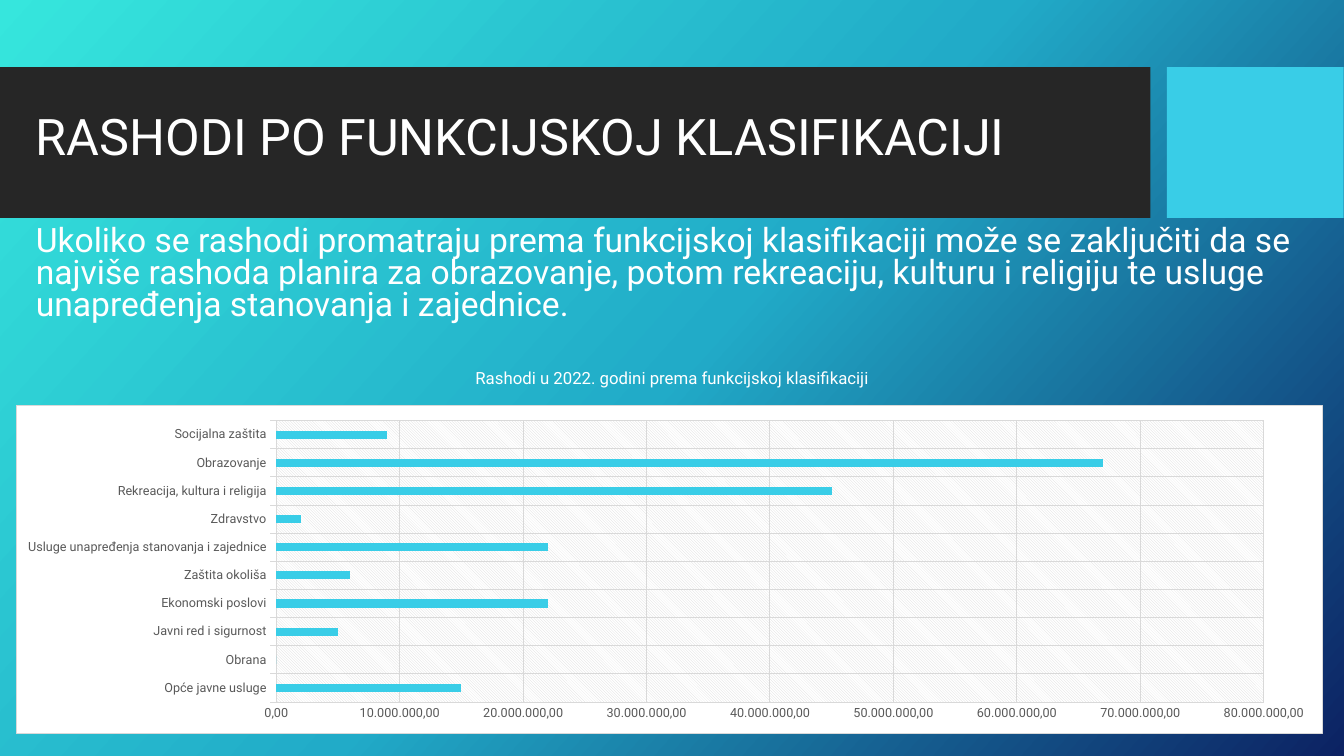
from copy import deepcopy

from lxml.etree import SubElement
from pptx import Presentation
from pptx.chart.data import CategoryChartData
from pptx.dml.color import RGBColor
from pptx.enum.chart import XL_CHART_TYPE, XL_TICK_MARK
from pptx.enum.shapes import MSO_SHAPE
from pptx.enum.text import MSO_ANCHOR, MSO_AUTO_SIZE, PP_ALIGN
from pptx.oxml import parse_xml
from pptx.oxml.ns import nsdecls, qn
from pptx.util import Cm, Pt

FONT = "Roboto"
WHITE, CYAN, DARK, GRID, LABEL = "FFFFFF", "39CDE7", "262626", "D9D9D9", "595959"
GRADIENT = [(0, "36E6DD"), (0.5, "21ABC8"), (1, "0C2263")]
BANDS = [((0, 1.69, 28.99, 3.8), DARK), ((29.41, 1.69, 4.45, 3.8), CYAN)]
TEXTS = [
    {"idx": 0, "at": (0.65, 2.64, 32.46, 1.75), "size": 36, "spacing": 0.9,
     "align": PP_ALIGN.LEFT, "anchor": MSO_ANCHOR.MIDDLE,
     "text": "RASHODI PO FUNKCIJSKOJ KLASIFIKACIJI"},
    {"idx": 1, "at": (0.65, 5.58, 32.46, 2.92), "size": 24, "spacing": 0.8,
     "align": PP_ALIGN.LEFT, "anchor": MSO_ANCHOR.TOP,
     "text": "Ukoliko se rashodi promatraju prema funkcijskoj klasifikaciji može se "
             "zaključiti da se najviše rashoda planira za obrazovanje, potom rekreaciju, "
             "kulturu i religiju te usluge unapređenja stanovanja i zajednice."},
    {"idx": 2, "at": (10.08, 9.23, 13.72, 0.71), "size": 12, "spacing": 0.8,
     "align": PP_ALIGN.CENTER, "anchor": MSO_ANCHOR.TOP,
     "text": "Rashodi u 2022. godini prema funkcijskoj klasifikaciji"},
]
EXPENSES = {
    "Opće javne usluge": 15000000,
    "Obrana": 0,
    "Javni red i sigurnost": 5000000,
    "Ekonomski poslovi": 22000000,
    "Zaštita okoliša": 6000000,
    "Usluge unapređenja stanovanja i zajednice": 22000000,
    "Zdravstvo": 2000000,
    "Rekreacija, kultura i religija": 45000000,
    "Obrazovanje": 67000000,
    "Socijalna zaštita": 9000000,
}
CHART_AT = (0.4, 10.2, 32.94, 8.3)
PLOT_PERCENT = {"x": 19.9, "y": 4.7, "w": 75.6, "h": 85.7}
NUMBER_FORMAT = r"[$-1041A]#,##0.00;\-\ #,##0.00"


def rgb(value):
    return RGBColor.from_string(value)


def apply(obj, values):
    for name, value in values.items():
        setattr(obj, name, value)


def box(at):
    return [Cm(v) for v in at]


def paint(fill, color):
    fill.solid()
    fill.fore_color.rgb = rgb(color)


def style_font(font, size, color):
    apply(font, {"name": FONT, "size": Pt(size), "bold": False})
    font.color.rgb = rgb(color)


def style_line(line, color):
    line.width = Pt(0.75)
    line.color.rgb = rgb(color)


def add_background(s):
    fill = s.background.fill
    fill.gradient()
    fill.gradient_angle = 318
    first = s._element.find(".//" + qn("a:gs"))
    first.addnext(deepcopy(first))
    for stop, (position, color) in zip(fill.gradient_stops, GRADIENT):
        stop.position = position
        stop.color.rgb = rgb(color)


def add_bands(s):
    for i, (at, color) in enumerate(BANDS):
        sp = s.shapes.add_shape(MSO_SHAPE.RECTANGLE, *box(at))
        sp.shadow.inherit = False
        paint(sp.fill, color)
        sp.line.fill.background()
        s.shapes._spTree.insert(2 + i, sp._element)


def fill_text(sp, item):
    apply(sp, dict(zip(("left", "top", "width", "height"), box(item["at"]))))
    tf = sp.text_frame
    tf.text = item["text"]
    apply(tf, {"word_wrap": True, "auto_size": MSO_AUTO_SIZE.NONE,
               "vertical_anchor": item["anchor"]})
    p = tf.paragraphs[0]
    apply(p, {"alignment": item["align"], "line_spacing": item["spacing"],
              "space_before": Pt(0)})
    pPr = p._p.get_or_add_pPr()
    pPr.set("marL", "0")
    pPr.set("indent", "0")
    SubElement(pPr, qn("a:buNone"))
    style_font(p.runs[0].font, item["size"], WHITE)


def add_expense_chart(s):
    data = CategoryChartData()
    data.categories = list(EXPENSES)
    data.add_series("Rashodi", list(EXPENSES.values()))
    chart = s.shapes.add_chart(XL_CHART_TYPE.BAR_CLUSTERED, *box(CHART_AT), data).chart
    apply(chart, {"has_title": False, "has_legend": False})
    style_font(chart.font, 10, WHITE)
    plot = chart.plots[0]
    apply(plot, {"gap_width": 247, "vary_by_categories": False})
    paint(plot.series[0].format.fill, CYAN)

    cat, val = chart.category_axis, chart.value_axis
    for axis, tick in ((cat, XL_TICK_MARK.OUTSIDE), (val, XL_TICK_MARK.NONE)):
        apply(axis, {"has_major_gridlines": True, "major_tick_mark": tick,
                     "minor_tick_mark": XL_TICK_MARK.NONE})
        style_line(axis.major_gridlines.format.line, GRID)
        style_font(axis.tick_labels.font, 9, LABEL)
    style_line(cat.format.line, GRID)
    val.format.line.fill.background()
    apply(val, {"minimum_scale": 0, "maximum_scale": 80000000, "major_unit": 10000000})
    apply(val.tick_labels, {"number_format": NUMBER_FORMAT,
                            "number_format_is_linked": False})
    format_areas(chart)


def format_areas(chart):
    ns = nsdecls("c", "a")
    area = chart._chartSpace.find(".//" + qn("c:plotArea"))
    for old in area.findall(qn("c:layout")):
        area.remove(old)
    sizes = "".join(f'<c:{k} val="{v / 100:.3f}"/>' for k, v in PLOT_PERCENT.items())
    area.insert(0, parse_xml(
        f'<c:layout {ns}><c:manualLayout><c:layoutTarget val="inner"/>'
        f'<c:xMode val="edge"/><c:yMode val="edge"/>{sizes}'
        '</c:manualLayout></c:layout>'))
    area.append(parse_xml(
        f'<c:spPr {ns}><a:pattFill prst="ltDnDiag">'
        f'<a:fgClr><a:srgbClr val="{GRID}"/></a:fgClr>'
        f'<a:bgClr><a:srgbClr val="{WHITE}"/></a:bgClr></a:pattFill>'
        '<a:ln><a:noFill/></a:ln></c:spPr>'))
    chart._chartSpace.find(qn("c:chart")).addnext(parse_xml(
        f'<c:spPr {ns}><a:solidFill><a:srgbClr val="{WHITE}"/></a:solidFill>'
        f'<a:ln w="{Pt(0.75)}"><a:solidFill><a:srgbClr val="{GRID}"/></a:solidFill>'
        '</a:ln></c:spPr>'))


def main():
    prs = Presentation()
    apply(prs, {"slide_width": Cm(33.87), "slide_height": Cm(19.05)})
    s = prs.slides.add_slide(prs.slide_layouts[3])
    add_background(s)
    add_bands(s)
    holders = {sp.placeholder_format.idx: sp for sp in s.placeholders}
    for item in TEXTS:
        fill_text(holders[item["idx"]], item)
    add_expense_chart(s)
    prs.save("out.pptx")


if __name__ == "__main__":
    main()
